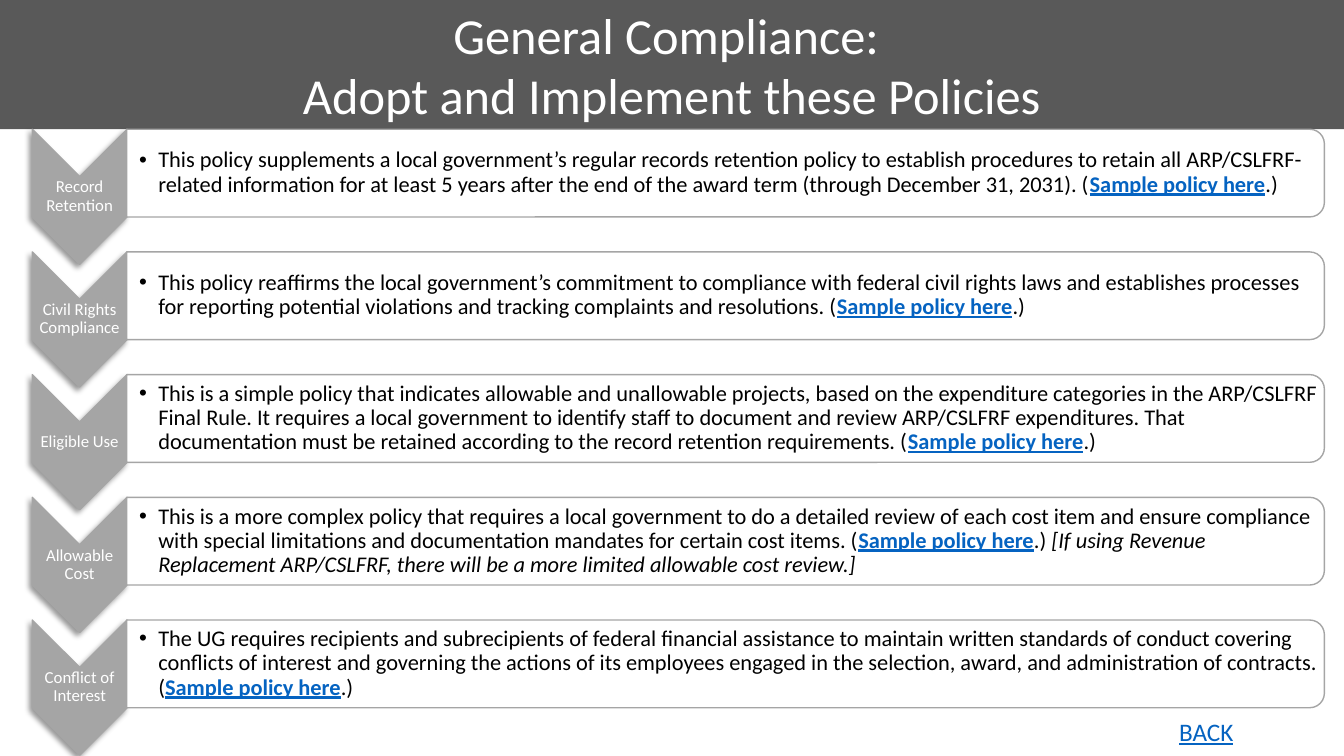
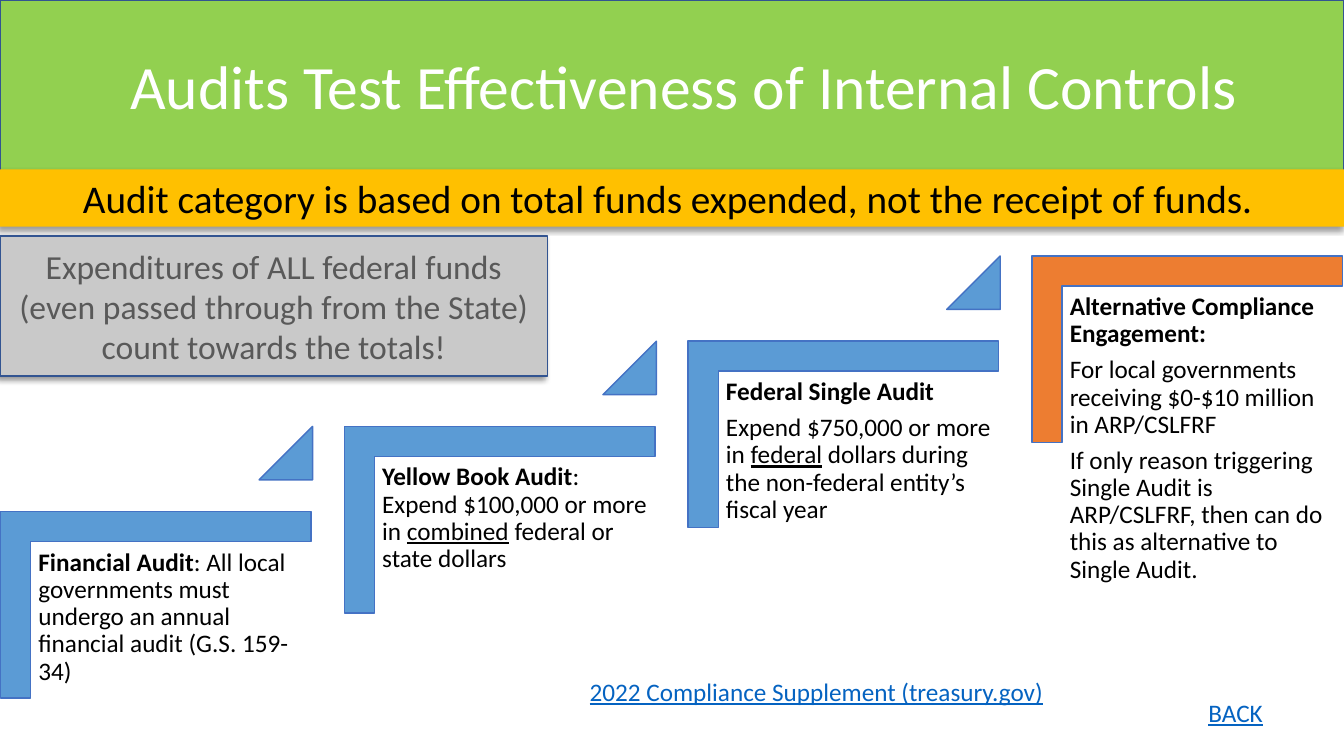
from lxml import etree
from pptx import Presentation, util as u
from pptx.dml.color import RGBColor
from pptx.enum import shapes, text
from pptx.oxml import ns

SHAPE = shapes.MSO_SHAPE
LEFT, CENTER = text.PP_ALIGN.LEFT, text.PP_ALIGN.CENTER
TOP, MIDDLE = text.MSO_ANCHOR.TOP, text.MSO_ANCHOR.MIDDLE
WHITE, BLACK, GRAY, DARK = "FFFFFF", "000000", "A5A5A5", "595959"
BLUE, BLUE_EDGE, NAVY, ORANGE = "5B9BD5", "4472C4", "325491", "ED7D31"
LINK = "0563C1"


def rgb(value):
    return RGBColor.from_string(value)


class Deck:
    font = "Calibri"
    inset = (0.1, 0.05, 0.1, 0.05)

    def __init__(self):
        self.prs = Presentation()
        self.prs.slide_width = u.Inches(13.33)
        self.prs.slide_height = u.Inches(7.5)
        self.s = None

    def frame(self, x, y, w, h):
        width, height = self.prs.slide_width, self.prs.slide_height
        return [round(share * side / 100) for share, side in
                ((x, width), (y, height), (w, width), (h, height))]

    def paint(self, sp, fill, line=None):
        sp.fill.solid()
        sp.fill.fore_color.rgb = rgb(fill)
        if line:
            sp.line.color.rgb = rgb(line)
            sp.line.width = u.Pt(1)
        else:
            sp.line.fill.background()

    def new_slide(self, title, box, size, fill, line=None, spacing=1.0, inset=inset):
        self.s = self.prs.slides.add_slide(self.prs.slide_layouts[5])
        sp = self.s.shapes.title
        sp.left, sp.top, sp.width, sp.height = self.frame(*box)
        self.paint(sp, fill, line)
        self.set_text(sp, title, size, WHITE, CENTER, MIDDLE, inset, spacing)

    def shape(self, kind, box, fill, line=None, shadow=False, turned=False, adj=()):
        x, y, w, h = self.frame(*box)
        if turned:
            x, y, w, h = x + (w - h) // 2, y + (h - w) // 2, h, w
        sp = self.s.shapes.add_shape(kind, x, y, w, h)
        sp.rotation = 90 if turned else 0
        for i, value in enumerate(adj):
            sp.adjustments[i] = value
        self.paint(sp, fill, line)
        sp.shadow.inherit = False
        if shadow:
            self.cast_shadow(sp)
        return sp

    def cast_shadow(self, sp):
        effects = sp._element.spPr.find(ns.qn("a:effectLst"))
        outer = etree.SubElement(effects, ns.qn("a:outerShdw"), blurRad=str(u.Pt(4)),
                                 dist=str(u.Pt(3)), dir="8100000", rotWithShape="0")
        color = etree.SubElement(outer, ns.qn("a:srgbClr"), val=BLACK)
        etree.SubElement(color, ns.qn("a:alpha"), val="40000")

    def label(self, box, paras, size, color, **style):
        sp = self.s.shapes.add_textbox(*self.frame(*box))
        self.set_text(sp, paras, size, color, **style)

    def link(self, box, caption, align=CENTER, anchor=MIDDLE):
        self.label(box, [[(caption, "u")]], 18, LINK, align=align, anchor=anchor)

    def set_text(self, sp, paras, size, color, align=LEFT, anchor=TOP, inset=inset,
                 spacing=1.0, after=0, bullet=False):
        paras = [[(p, "")] if isinstance(p, str) else p for p in paras]
        tf = sp.text_frame
        tf.text = "\n".join(runs[0][0] for runs in paras)
        tf.word_wrap = True
        tf.auto_size = text.MSO_AUTO_SIZE.NONE
        tf.vertical_anchor = anchor
        tf.margin_left, tf.margin_top, tf.margin_right, tf.margin_bottom = map(u.Inches, inset)
        for p, runs in zip(tf.paragraphs, paras):
            p.alignment = align
            p.line_spacing = spacing
            p.space_before, p.space_after = u.Pt(0), u.Pt(after)
            if bullet:
                self.add_bullet(p)
            for words, _ in runs[1:]:
                p.add_run().text = words
            for r, (_, marks) in zip(p.runs, runs):
                r.font.name = self.font
                r.font.size = u.Pt(size)
                r.font.bold = "b" in marks
                r.font.italic = "i" in marks
                r.font.underline = "u" in marks
                r.font.color.rgb = rgb(LINK if "l" in marks else color)

    def add_bullet(self, p):
        pPr = p._p.get_or_add_pPr()
        indent = u.Inches(0.19)
        pPr.set("marL", str(indent))
        pPr.set("indent", str(-indent))
        etree.SubElement(pPr, ns.qn("a:buFont"), typeface="Arial")
        etree.SubElement(pPr, ns.qn("a:buChar"), char="•")


POLICIES = [
    ("Record Retention",
     "This policy supplements a local government’s regular records retention policy to "
     "establish procedures to retain all ARP/CSLFRF-related information for at least 5 years "
     "after the end of the award term (through December 31, 2031). (", ""),
    ("Civil Rights Compliance",
     "This policy reaffirms the local government’s commitment to compliance with federal civil "
     "rights laws and establishes processes for reporting potential violations and tracking "
     "complaints and resolutions. (", ""),
    ("Eligible Use",
     "This is a simple policy that indicates allowable and unallowable projects, based on the "
     "expenditure categories in the ARP/CSLFRF Final Rule. It requires a local government to "
     "identify staff to document and review ARP/CSLFRF expenditures. That documentation must be "
     "retained according to the record retention requirements. (", ""),
    ("Allowable Cost",
     "This is a more complex policy that requires a local government to do a detailed review of "
     "each cost item and ensure compliance with special limitations and documentation mandates "
     "for certain cost items. (",
     "[If using Revenue Replacement ARP/CSLFRF, there will be a more limited allowable cost "
     "review.]"),
    ("Conflict of Interest",
     "The UG requires recipients and subrecipients of federal financial assistance to maintain "
     "written standards of conduct covering conflicts of interest and governing the actions of "
     "its employees engaged in the selection, award, and administration of contracts. (", ""),
]

AUDITS = [
    [[("Financial Audit", "b"),
      (": All local governments must undergo an annual financial audit (G.S. 159-34)", "")]],
    [[("Yellow Book Audit", "b"), (": Expend $100,000 or more in ", ""), ("combined", "u"),
      (" federal or state dollars", "")]],
    [[("Federal Single Audit", "b")],
     [("Expend $750,000 or more in ", ""), ("federal", "u"),
      (" dollars during the non-federal entity’s fiscal year", "")]],
    [[("Alternative Compliance Engagement:", "b")],
     "For local governments receiving $0-$10 million in ARP/CSLFRF",
     "If only reason triggering Single Audit is ARP/CSLFRF, then can do this as alternative to "
     "Single Audit."],
]


def policies_slide(deck):
    deck.new_slide(["General Compliance: ", "Adopt and Implement these Policies"],
                   (0, 0, 100, 17.07), 36, DARK)
    thin = (0.01,) * 4
    for i, (name, summary, note) in enumerate(POLICIES):
        y = 17.1 + 16.23 * i
        deck.shape(SHAPE.CHEVRON, (2.4, y, 7.05, 17.87), GRAY, GRAY, shadow=True, turned=True)
        deck.label((2.4, y + 6.23, 7.05, 5.33), [name], 12, WHITE, align=CENTER,
                   anchor=MIDDLE, inset=thin, spacing=0.9)
        deck.shape(SHAPE.ROUND_2_SAME_RECTANGLE, (9.42, y, 89.12, 11.6), WHITE, GRAY, turned=True)
        runs = [(summary, ""), ("Sample policy here", "bul"), (".) " if note else ".)", "")]
        if note:
            runs.append((note, "i"))
        deck.label((9.45, y + 0.5, 88.75, 10.53), [runs], 16, BLACK, anchor=MIDDLE,
                   inset=(0.12, 0.01, 0.01, 0.01), spacing=0.9, bullet=True)
    deck.link((85.82, 94.93, 7.88, 3.6), "BACK")


def audits_slide(deck):
    deck.new_slide(["Audits Test Effectiveness of Internal Controls"], (0, 0, 100, 25.33), 44,
                   "92D050", NAVY, spacing=0.9, inset=(0.34, 0.05, 0.1, 0.18))
    step_x, step_y = 25.58, 11.27
    last = len(AUDITS) - 1
    for i, paras in enumerate(AUDITS):
        x, y = 0.04 + step_x * i, 67.67 - step_y * i
        deck.shape(SHAPE.CORNER, (x, y, 23.1, 24.67), ORANGE if i == last else BLUE, BLUE_EDGE,
                   turned=True, adj=(0.161, 0.161))
        deck.label((x + 2.29, y + 4.06, 20.86, 32.53), paras, 18, BLACK,
                   inset=(0.07,) * 4, spacing=0.9, after=6.3)
        if i < last:
            deck.shape(SHAPE.ISOSCELES_TRIANGLE, (x + 19.24, y - step_y, 3.98, 7.07), BLUE,
                       BLUE_EDGE, adj=(1,))
    band = deck.shape(SHAPE.RECTANGLE, (0, 22.4, 100, 7.6), "FFC000", shadow=True)
    deck.set_text(band, ["Audit category is based on total funds expended, "
                         "not the receipt of funds. "], 28, BLACK, CENTER)
    callout = deck.shape(SHAPE.RECTANGLE, (0, 31.2, 40.74, 18.53), "C9C9C9", NAVY, shadow=True)
    deck.set_text(callout, ["Expenditures of ALL federal funds (even passed through from the "
                            "State) count towards the totals!"], 24, DARK, CENTER, MIDDLE)
    deck.link((43.14, 88.8, 50.49, 5.33), "2022 Compliance Supplement (treasury.gov)", LEFT, TOP)
    deck.link((86.5, 91.2, 10.88, 6), "BACK")


def main():
    deck = Deck()
    policies_slide(deck)
    audits_slide(deck)
    deck.prs.save("out.pptx")


if __name__ == "__main__":
    main()
